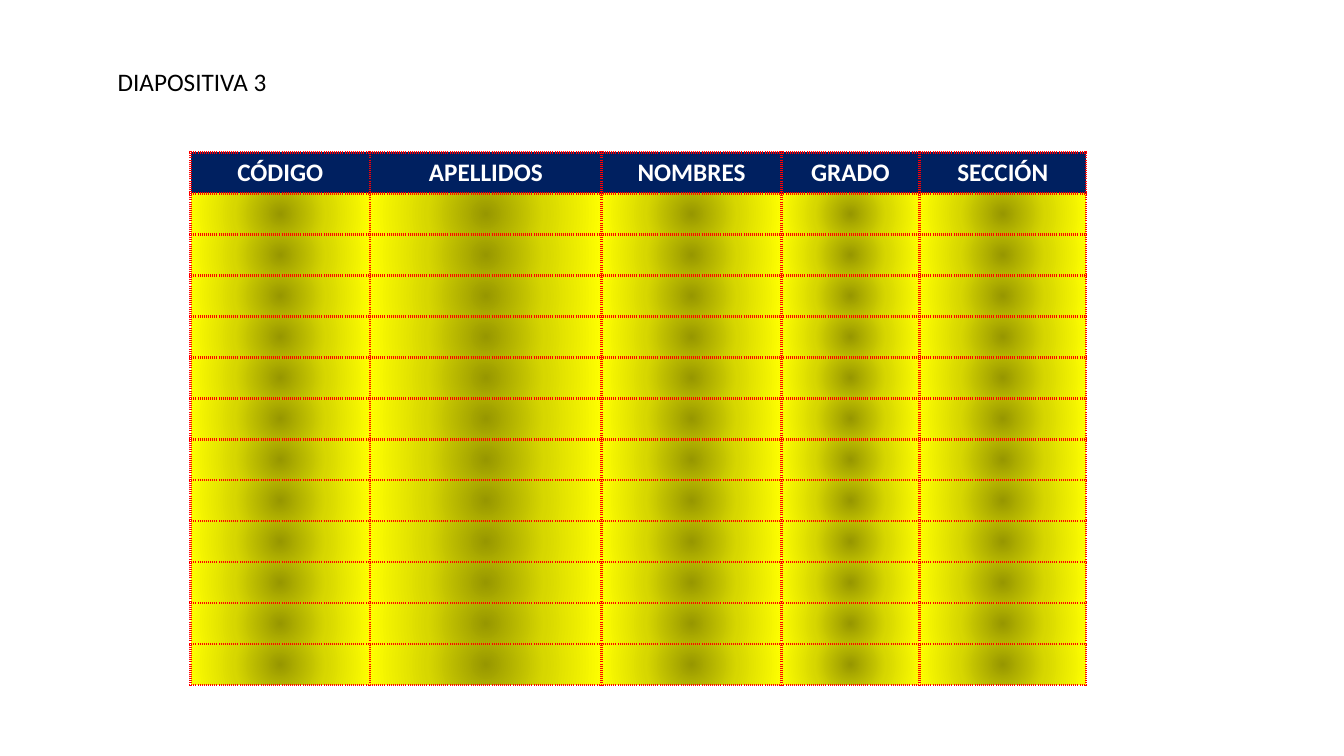
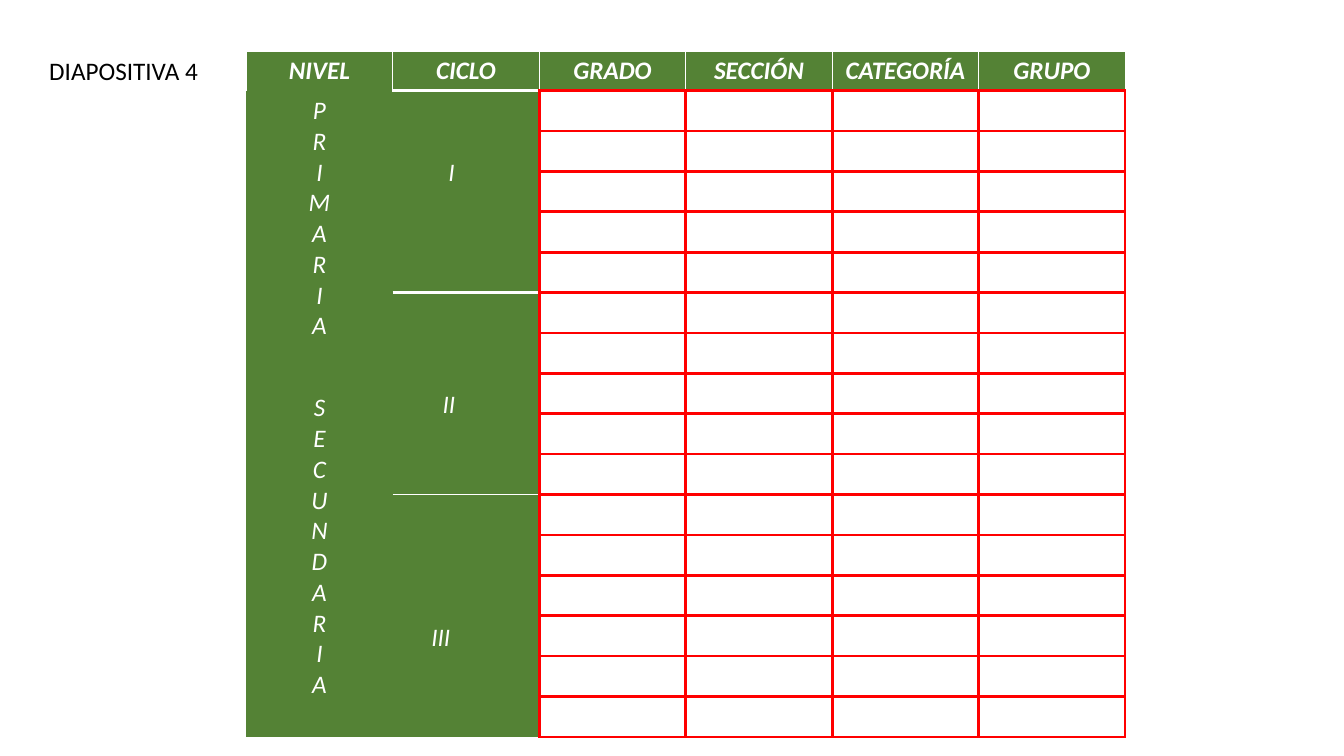
"""Build two slides of school tables: a student roster and a level chart."""
from dataclasses import dataclass

from lxml import etree
from pptx import Presentation
from pptx import util as u
from pptx.dml import color as dml
from pptx.enum import text as txt
from pptx.oxml import ns

COLORS = {
    "ink": "000000",
    "white": "FFFFFF",
    "navy": "002060",
    "green": "548235",
    "red": "FF0000",
}
GLOW = ((0, "979700"), (50, "D7D700"), (100, "FFFF00"))
FONT = "Calibri"
TEXT_SIZE = 18
LINE_HEIGHT = 21.97
SPACE_WIDTH = 4.07
SIDE_MARGIN = 7.2
TOP_MARGIN = 3.6
NO_GRID_STYLE = "{2D5ABB26-0587-4C30-8999-92F81FD0307C}"


@dataclass(frozen=True)
class Border:
    color: str
    width: float
    dash: str = "solid"


@dataclass(frozen=True)
class Caption:
    text: str
    left: float
    top: float


@dataclass(frozen=True)
class Grid:
    left: float
    top: float
    widths: tuple[float, ...]
    heights: tuple[float, ...]


@dataclass(frozen=True)
class Block:
    lines: str
    row: int
    column: int
    rows: int
    drop: int = 0
    indent: int = 0
    centred: bool = True


DOTTED = Border("red", 2.25, "sysDot")
RED = Border("red", 2.25)
THIN = Border("white", 1)
THICK = Border("white", 3)

ROSTER_HEADS = ("CÓDIGO", "APELLIDOS", "NOMBRES", "GRADO", "SECCIÓN")
ROSTER = Grid(136.1, 108.9, (128.2, 165.6, 128.2, 98.8, 118.8), (29.28,) * 13)

LEVEL_HEADS = ("NIVEL", "CICLO", "GRADO", "SECCIÓN", "CATEGORÍA", "GRUPO")
LEVEL_ROW = 28.87
SPLIT_ROW = (17.2, 11.67)
LEVELS = Grid(
    175.9, 36.4, (104.64,) * 6,
    (28.3,) + (LEVEL_ROW,) * 6 + SPLIT_ROW + (LEVEL_ROW,) * 9,
)
LEVEL_BLOCKS = (
    Block("PRIMARIA", 1, 0, 7),
    Block("SECUNDARIA", 8, 0, 10, drop=1),
)
CYCLE_BLOCKS = (
    Block("I", 1, 1, 5, drop=2, indent=8, centred=False),
    Block("II", 6, 1, 6, drop=3, indent=7, centred=False),
    Block("III", 12, 1, 6, drop=4, indent=5, centred=False),
)


def add_run(paragraph, words: str, color: str, bold=False, italic=False) -> None:
    run = paragraph.add_run()
    run.text = words
    font = run.font
    font.name, font.size = FONT, u.Pt(TEXT_SIZE)
    font.bold, font.italic = bold, italic
    font.color.rgb = dml.RGBColor.from_string(COLORS[color])


def add_child(parent, tag: str, **attributes: str):
    return etree.SubElement(parent, ns.qn(f"a:{tag}"), attributes)


def set_borders(cell, borders: dict[str, Border]) -> None:
    properties = cell._tc.get_or_add_tcPr()
    for side in "LRTB":
        if side in borders:
            border = borders[side]
            line = add_child(properties, f"ln{side}", w=str(u.Pt(border.width)))
            paint = add_child(line, "solidFill")
            add_child(paint, "srgbClr", val=COLORS[border.color])
            add_child(line, "prstDash", val=border.dash)


def fill_solid(cell, color: str) -> None:
    cell.fill.solid()
    cell.fill.fore_color.rgb = dml.RGBColor.from_string(COLORS[color])


def fill_glow(cell) -> None:
    gradient = add_child(cell._tc.get_or_add_tcPr(), "gradFill", rotWithShape="1")
    stops = add_child(gradient, "gsLst")
    for percent, shade in GLOW:
        stop = add_child(stops, "gs", pos=str(percent * 1000))
        add_child(stop, "srgbClr", val=shade)
    circle = add_child(gradient, "path", path="circle")
    add_child(circle, "fillToRect", **dict.fromkeys("ltrb", "50000"))


def add_caption(slide, caption: Caption) -> None:
    box = slide.shapes.add_textbox(
        u.Pt(caption.left), u.Pt(caption.top), u.Pt(148.3), u.Pt(29.1)
    )
    frame = box.text_frame
    frame.word_wrap = True
    frame.auto_size = txt.MSO_AUTO_SIZE.SHAPE_TO_FIT_TEXT
    add_run(frame.paragraphs[0], caption.text, "ink")


def add_grid(slide, grid: Grid):
    frame = slide.shapes.add_table(
        len(grid.heights), len(grid.widths), u.Pt(grid.left), u.Pt(grid.top),
        u.Pt(sum(grid.widths)), u.Pt(sum(grid.heights)),
    )
    table = frame.table
    table.first_row = table.horz_banding = False
    table._tbl.tblPr.find(ns.qn("a:tableStyleId")).text = NO_GRID_STYLE
    for column, width in zip(table.columns, grid.widths):
        column.width = u.Pt(width)
    for row, height in zip(table.rows, grid.heights):
        row.height = u.Pt(height)
    return table


def add_heads(table, heads: tuple[str, ...], italic: bool) -> None:
    for column, head in enumerate(heads):
        paragraph = table.cell(0, column).text_frame.paragraphs[0]
        paragraph.alignment = txt.PP_ALIGN.CENTER
        add_run(paragraph, head, "white", bold=True, italic=italic)


def add_block(table, block: Block) -> None:
    cell = table.cell(block.row, block.column)
    cell.merge(table.cell(block.row + block.rows - 1, block.column))
    cell.margin_top = u.Pt(TOP_MARGIN + block.drop * LINE_HEIGHT)
    cell.margin_left = u.Pt(SIDE_MARGIN + block.indent * SPACE_WIDTH)
    frame = cell.text_frame
    for index, line in enumerate(block.lines if block.centred else [block.lines]):
        paragraph = frame.add_paragraph() if index else frame.paragraphs[0]
        if block.centred:
            paragraph.alignment = txt.PP_ALIGN.CENTER
        add_run(paragraph, line, "white", italic=True)


def level_borders(row: int, column: int) -> dict[str, Border]:
    if row == 0:
        under = {1: {"B": THICK}}.get(column, {"B": RED} if column > 1 else {})
        return dict.fromkeys("LRT", THIN) | under
    if column == 0:
        return {}
    if column > 1:
        return dict.fromkeys("LRTB", RED)
    borders = {"R": RED}
    for block in CYCLE_BLOCKS:
        if row == block.row:
            borders["T"] = THICK if row == 1 else THIN
        if row == block.row + block.rows - 1:
            borders["B"] = THIN
    return borders


def draw_roster(slide) -> None:
    table = add_grid(slide, ROSTER)
    for row in range(len(ROSTER.heights)):
        for column in range(len(ROSTER.widths)):
            cell = table.cell(row, column)
            set_borders(cell, dict.fromkeys("LRTB", DOTTED))
            if row:
                fill_glow(cell)
            else:
                fill_solid(cell, "navy")
    add_heads(table, ROSTER_HEADS, italic=False)
    add_caption(slide, Caption("DIAPOSITIVA 3", 77, 43.9))


def draw_levels(slide) -> None:
    table = add_grid(slide, LEVELS)
    for row in range(len(LEVELS.heights)):
        for column in range(len(LEVELS.widths)):
            cell = table.cell(row, column)
            set_borders(cell, level_borders(row, column))
            fill_solid(cell, "white" if row and column > 1 else "green")
            cell.margin_top = cell.margin_bottom = u.Pt(3)
    add_heads(table, LEVEL_HEADS, italic=True)
    for block in LEVEL_BLOCKS + CYCLE_BLOCKS:
        add_block(table, block)
    split = LEVELS.heights.index(SPLIT_ROW[0])
    for column in range(2, len(LEVELS.widths)):
        table.cell(split, column).merge(table.cell(split + 1, column))
    add_caption(slide, Caption("DIAPOSITIVA 4", 28.1, 36))


def main() -> None:
    deck = Presentation()
    deck.slide_width, deck.slide_height = u.Pt(960), u.Pt(540)
    for draw in (draw_roster, draw_levels):
        draw(deck.slides.add_slide(deck.slide_layouts[6]))
    deck.save("out.pptx")


if __name__ == "__main__":
    main()
